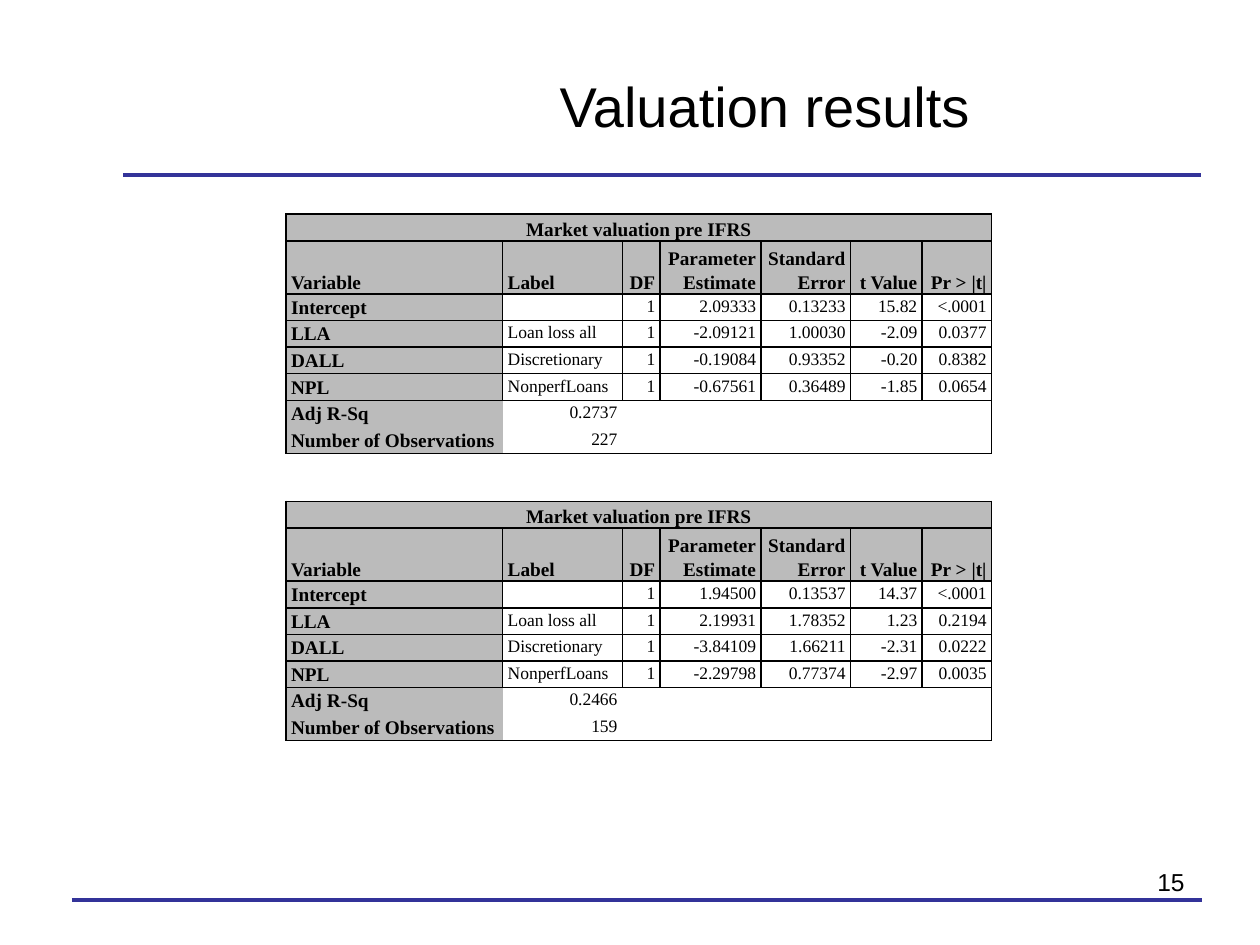
from lxml import etree
from pptx import Presentation, util as u
from pptx.dml.color import RGBColor
from pptx.enum import shapes, text
from pptx.oxml.ns import qn

# Content
TITLE = "Valuation results"
PAGE_NUMBER = "15"
CAPTION = "Market valuation pre IFRS"
HEADERS = ["Variable", "Label", "DF", "Parameter\nEstimate", "Standard\nError", "t Value", "Pr > |t|"]
VARIABLES = [("Intercept", ""), ("LLA", "Loan loss all"),
             ("DALL", "Discretionary"), ("NPL", "NonperfLoans")]
SUMMARY = ["Adj R-Sq", "Number of Observations"]
RESULTS = [
    {"top": 1.7,
     "estimates": [("2.09333", "0.13233", "15.82", "<.0001"),
                   ("-2.09121", "1.00030", "-2.09", "0.0377"),
                   ("-0.19084", "0.93352", "-0.20", "0.8382"),
                   ("-0.67561", "0.36489", "-1.85", "0.0654")],
     "summary": ["0.2737", "227"]},
    {"top": 3.98,
     "estimates": [("1.94500", "0.13537", "14.37", "<.0001"),
                   ("2.19931", "1.78352", "1.23", "0.2194"),
                   ("-3.84109", "1.66211", "-2.31", "0.0222"),
                   ("-2.29798", "0.77374", "-2.97", "0.0035")],
     "summary": ["0.2466", "159"]},
]

# Layout and style
COLUMNS = [1.72, 0.95, 0.3, 0.8, 0.71, 0.57, 0.55]
TABLE_LEFT, ROW_HEIGHT = 2.27, 0.19
RULES = [(0.98, 9.53, 1.39), (0.57, 9.54, 7.14)]
BLACK = RGBColor(0x00, 0x00, 0x00)
BLUE = RGBColor(0x33, 0x33, 0x99)
GREY = RGBColor(0xBB, 0xBB, 0xBB)
LEFT, CENTER, RIGHT = text.PP_ALIGN.LEFT, text.PP_ALIGN.CENTER, text.PP_ALIGN.RIGHT


def add_span(para, words, size, font="Arial", bold=False):
    for number, line in enumerate(words.split("\n")):
        if number:
            para.add_line_break()
        span = para.add_run()
        span.text = line
        span.font.size, span.font.name, span.font.bold = u.Pt(size), font, bold
        span.font.color.rgb = BLACK


def set_borders(cell, sides):
    properties = cell._tc.get_or_add_tcPr()
    for side in "LRTB":
        line = etree.SubElement(properties, qn(f"a:ln{side}"), w=str(u.Pt(1)))
        if side in sides:
            fill = etree.SubElement(line, qn("a:solidFill"))
            etree.SubElement(fill, qn("a:srgbClr"), val=str(BLACK))
        else:
            etree.SubElement(line, qn("a:noFill"))


def fill_cell(cell, words, align, heading, anchor, sides):
    set_borders(cell, sides)
    if heading:
        cell.fill.solid()
        cell.fill.fore_color.rgb = GREY
    else:
        cell.fill.background()
    cell.margin_left = cell.margin_right = u.Inches(0.04)
    cell.margin_top = cell.margin_bottom = 0
    cell.vertical_anchor = anchor
    para = cell.text_frame.paragraphs[0]
    para.alignment, para.line_spacing, para.space_after = align, 1.15, u.Pt(3)
    if words:
        add_span(para, words, 11 if heading else 10, "Times New Roman", heading)
    else:
        para._p.get_or_add_endParaRPr().set("sz", "1000")


def add_results(page, result):
    blanks = [""] * (len(COLUMNS) - 2)
    rows = [[CAPTION, ""] + blanks, HEADERS]
    rows += [[*names, "1", *values] for names, values in zip(VARIABLES, result["estimates"])]
    rows += [[name, value] + blanks for name, value in zip(SUMMARY, result["summary"])]
    first_summary, last_row, last_column = len(rows) - 2, len(rows) - 1, len(COLUMNS) - 1

    frame = page.shapes.add_table(
        len(rows), len(COLUMNS), u.Inches(TABLE_LEFT), u.Inches(result["top"]),
        u.Inches(sum(COLUMNS)), u.Inches(ROW_HEIGHT * (len(rows) + 1)))
    table = frame.table
    table.first_row = table.horz_banding = False
    for column, width in zip(table.columns, COLUMNS):
        column.width = u.Inches(width)

    for r, row in enumerate(rows):
        table.rows[r].height = u.Inches(ROW_HEIGHT * (2 if r == 1 else 1))
        for c, words in enumerate(row):
            if r == 0:
                align = CENTER
            elif c == 0 or (c == 1 and r < first_summary):
                align = LEFT
            else:
                align = RIGHT
            sides = "LRTB"
            if r >= first_summary:  # the summary block has an outer frame only
                sides = "B" if r == last_row else "T"
                sides += {0: "L", last_column: "R"}.get(c, "")
            anchor = text.MSO_ANCHOR.BOTTOM if r < 2 else text.MSO_ANCHOR.TOP
            fill_cell(table.cell(r, c), words, align, r < 2 or c == 0, anchor, sides)
    table.cell(0, 0).merge(table.cell(0, last_column))


def main():
    deck = Presentation()
    deck.slide_width, deck.slide_height = u.Inches(10), u.Inches(7.5)
    page = deck.slides.add_slide(deck.slide_layouts[5])

    # Rules under the title and above the bottom edge
    for start, end, y in RULES:
        rule = page.shapes.add_connector(
            shapes.MSO_CONNECTOR.STRAIGHT, u.Inches(start), u.Inches(y), u.Inches(end), u.Inches(y))
        rule.line.color.rgb, rule.line.width = BLUE, u.Pt(2.25)
        etree.SubElement(rule._element.spPr, qn("a:effectLst"))

    # Page number
    box = page.shapes.add_textbox(u.Inches(7.17), u.Inches(6.83), u.Inches(2.33), u.Inches(0.52))
    box.text_frame.word_wrap = True
    para = box.text_frame.paragraphs[0]
    para.alignment = RIGHT
    add_span(para, PAGE_NUMBER, 14)

    # Title
    title = page.shapes.title
    title.left, title.top = u.Inches(2.64), u.Inches(0.21)
    title.width, title.height = u.Inches(6.86), u.Inches(1.25)
    title.text_frame.vertical_anchor = text.MSO_ANCHOR.MIDDLE
    para = title.text_frame.paragraphs[0]
    para.alignment = CENTER
    add_span(para, TITLE, 32)

    # Regression tables
    for result in RESULTS:
        add_results(page, result)

    deck.save("out.pptx")


if __name__ == "__main__":
    main()
